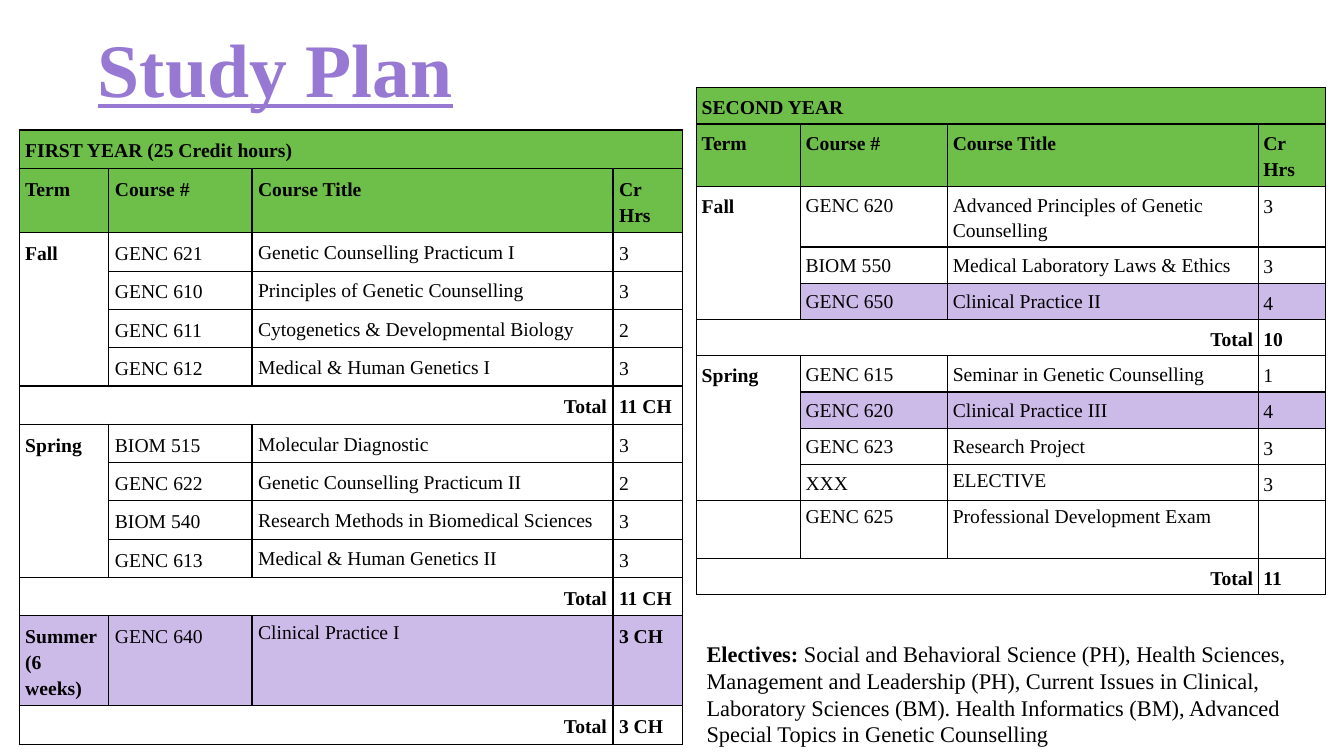
from pptx import Presentation
from pptx import util as u
from pptx.dml.color import RGBColor
from pptx.enum import text
from pptx.oxml import parse_xml
from pptx.oxml.ns import nsdecls

COLORS = {"title": "9779D3", "header": "6EBE4A", "practice": "CCBAE9", "ink": "000000"}
FONT = "Times New Roman"
HEADINGS = ["Term", "Course #", "Course Title", "Cr Hrs"]

FIRST_YEAR = [
    ("Fall", [
        ("GENC 621", "Genetic Counselling Practicum I", "3"),
        ("GENC 610", "Principles of Genetic Counselling", "3"),
        ("GENC 611", "Cytogenetics & Developmental Biology", "2"),
        ("GENC 612", "Medical & Human Genetics I", "3"),
    ], "11 CH"),
    ("Spring", [
        ("BIOM 515", "Molecular Diagnostic", "3"),
        ("GENC 622", "Genetic Counselling Practicum II", "2"),
        ("BIOM 540", "Research Methods in Biomedical Sciences", "3"),
        ("GENC 613", "Medical & Human Genetics II", "3"),
    ], "11 CH"),
    ("Summer\n(6 weeks)", [("GENC 640", "Clinical Practice I", "3 CH")], "3 CH"),
]
SECOND_YEAR = [
    ("Fall", [
        ("GENC 620", "Advanced Principles of Genetic Counselling", "3"),
        ("BIOM 550", "Medical Laboratory Laws & Ethics", "3"),
        ("GENC 650", "Clinical Practice II", "4"),
    ], "10"),
    ("Spring", [
        ("GENC 615", "Seminar in Genetic Counselling", "1"),
        ("GENC 620", "Clinical Practice III", "4"),
        ("GENC 623", "Research Project", "3"),
        ("XXX", "ELECTIVE", "3"),
    ], None),
    ("", [("GENC 625", "Professional Development Exam", "")], "11"),
]
SINGLE_SPACED = {"Clinical Practice I", "ELECTIVE", "Professional Development Exam"}
ELECTIVES = (
    "Social and Behavioral Science (PH), Health Sciences, Management and Leadership (PH), "
    "Current Issues in Clinical, Laboratory Sciences (BM). Health Informatics (BM), "
    "Advanced Special Topics in Genetic Counselling"
)


def add_run(paragraph, words, size=14, color="ink", bold=False, underline=False):
    run = paragraph.add_run()
    run.text = words
    run.font.name = FONT
    run.font.size = u.Pt(size)
    run.font.bold = bold
    run.font.underline = underline
    run.font.color.rgb = RGBColor.from_string(COLORS[color])


def fill_cell(cell, words, bold=False, fill=None, spacing=1.2, after=0, align=text.PP_ALIGN.LEFT):
    if fill:
        cell.fill.solid()
        cell.fill.fore_color.rgb = RGBColor.from_string(COLORS[fill])
    for index, line in enumerate(words.split("\n") if words else []):
        frame = cell.text_frame
        paragraph = frame.add_paragraph() if index else frame.paragraphs[0]
        paragraph.alignment = align
        paragraph.line_spacing = spacing
        paragraph.space_after = u.Pt(after)
        add_run(paragraph, line, bold=bold)


def prepare_cell(cell, margin):
    cell.margin_left = cell.margin_right = u.Inches(margin)
    cell.margin_top = cell.margin_bottom = u.Inches(margin)
    cell.fill.background()
    properties = cell._tc.get_or_add_tcPr()
    for index, side in enumerate(("lnL", "lnR", "lnT", "lnB")):
        properties.insert(index, parse_xml(
            f'<a:{side} {nsdecls("a")} w="12700"><a:solidFill>'
            f'<a:srgbClr val="{COLORS["ink"]}"/></a:solidFill></a:{side}>'
        ))


def add_year(slide, left, top, heading, terms, widths, heights, margin, code_spacing):
    frame = slide.shapes.add_table(
        len(heights), len(widths), u.Inches(left), u.Inches(top),
        u.Inches(sum(widths)), u.Inches(sum(heights)),
    )
    table = frame.table
    table.first_row = table.horz_banding = False
    for column, width in zip(table.columns, widths):
        column.width = u.Inches(width)
    for row, height in zip(table.rows, heights):
        row.height = u.Inches(height)
    for cell in table.iter_cells():
        prepare_cell(cell, margin)

    table.cell(0, 0).merge(table.cell(0, 3))
    fill_cell(table.cell(0, 0), heading, bold=True, fill="header")
    for column, label in enumerate(HEADINGS):
        fill_cell(table.cell(1, column), label, bold=True, fill="header")

    row = 2
    for term, courses, total in terms:
        only_practice = len(courses) == 1 and courses[0][1].startswith("Clinical Practice")
        if len(courses) > 1:
            table.cell(row, 0).merge(table.cell(row + len(courses) - 1, 0))
        fill_cell(table.cell(row, 0), term, bold=True, fill="practice" if only_practice else None)
        for code, title, hours in courses:
            fill = "practice" if title.startswith("Clinical Practice") else None
            single = title in SINGLE_SPACED
            fill_cell(table.cell(row, 1), code, fill=fill,
                      spacing=code_spacing if hours else 1.0)
            fill_cell(table.cell(row, 2), title, fill=fill,
                      spacing=1.0 if single else 1.15, after=0 if single else 10)
            fill_cell(table.cell(row, 3), hours, bold=only_practice, fill=fill)
            row += 1
        if total:
            table.cell(row, 0).merge(table.cell(row, 2))
            fill_cell(table.cell(row, 0), "Total", bold=True, align=text.PP_ALIGN.RIGHT)
            fill_cell(table.cell(row, 3), total, bold=True)
            row += 1


def add_title(slide, left, top, width, height):
    title = slide.shapes.title
    title.left, title.top = u.Inches(left), u.Inches(top)
    title.width, title.height = u.Inches(width), u.Inches(height)
    title.text_frame.vertical_anchor = text.MSO_ANCHOR.MIDDLE
    title.text_frame.auto_size = text.MSO_AUTO_SIZE.NONE
    paragraph = title.text_frame.paragraphs[0]
    paragraph.alignment = text.PP_ALIGN.LEFT
    paragraph.line_spacing = 0.9
    add_run(paragraph, "Study Plan", size=54, color="title", bold=True, underline=True)


def add_electives(slide, left, top, width, height):
    box = slide.shapes.add_textbox(
        u.Inches(left), u.Inches(top), u.Inches(width), u.Inches(height)
    )
    box.text_frame.word_wrap = True
    box.text_frame.auto_size = text.MSO_AUTO_SIZE.SHAPE_TO_FIT_TEXT
    paragraph = box.text_frame.paragraphs[0]
    add_run(paragraph, "Electives: ", size=16, bold=True)
    add_run(paragraph, ELECTIVES, size=16)


def main():
    presentation = Presentation()
    presentation.slide_width = u.Inches(13.33)
    presentation.slide_height = u.Inches(7.5)
    slide = presentation.slides.add_slide(presentation.slide_layouts[5])
    add_title(slide, 0.87, 0, 11.5, 1.45)
    add_year(slide, 0.19, 1.29, "FIRST YEAR (25 Credit hours)", FIRST_YEAR,
             [0.89, 1.42, 3.58, 0.69], [0.38, 0.64] + [0.38] * 10 + [0.8, 0.38],
             margin=0.06, code_spacing=1.2)
    add_year(slide, 6.91, 0.87, "SECOND YEAR", SECOND_YEAR,
             [1.03, 1.46, 3.08, 0.67], [0.36, 0.62, 0.6] + [0.36] * 7 + [0.57, 0.36],
             margin=0.05, code_spacing=1.15)
    add_electives(slide, 6.91, 6.3, 6.14, 1.18)
    presentation.save("out.pptx")


if __name__ == "__main__":
    main()
